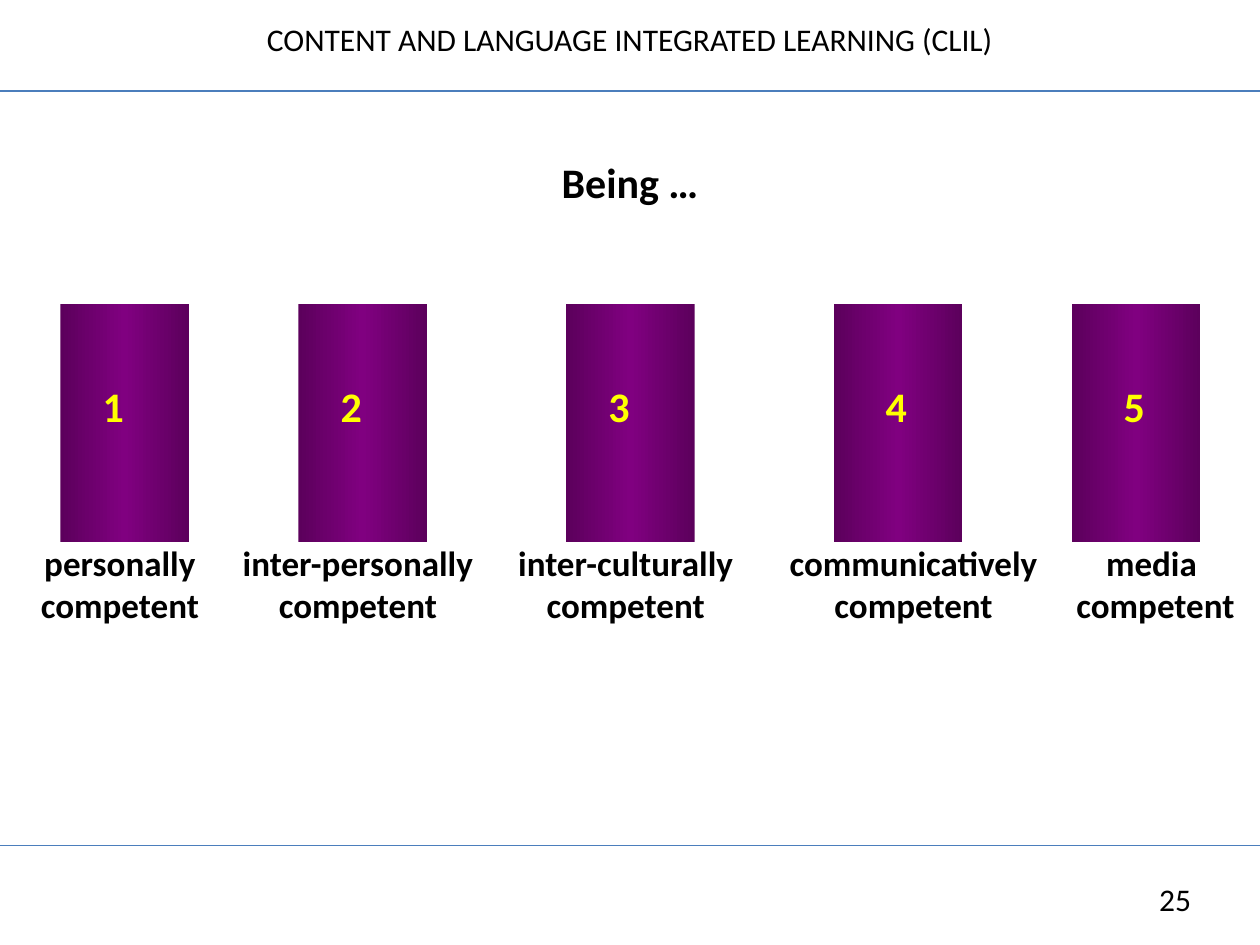
from copy import deepcopy
from dataclasses import dataclass
from itertools import accumulate

from lxml import etree
from pptx import Presentation
from pptx import util as u
from pptx.dml.color import RGBColor
from pptx.enum import shapes, text
from pptx.oxml.ns import qn

BLACK = RGBColor(0x00, 0x00, 0x00)
YELLOW = RGBColor(0xFF, 0xFF, 0x00)
PURPLE = RGBColor(0x80, 0x00, 0x80)
DARK_PURPLE = RGBColor(0x5C, 0x00, 0x5C)
BLUE = RGBColor(0x4B, 0x7E, 0xBC)

CENTER = text.PP_ALIGN.CENTER
LEFT = text.PP_ALIGN.LEFT

# Pillar geometry in points
PILLAR_TOP, PILLAR_WIDTH, PILLAR_HEIGHT = 174, 73.5, 136
LABEL_TOP, LABEL_HEIGHT, LABEL_SHIFT = 306, 55.5, -51
NUMBER_TOP, NUMBER_WIDTH, NUMBER_HEIGHT = 214, 34, 36
PILLAR_LEFTS = accumulate([34.5, 136, 153, 153, 136])

# Label lines, label width, number shift
PILLARS = [
    (["personally competent"], 170, 17),
    (["inter-personally competent"], 170, 17),
    (["inter-culturally competent"], 170, 17),
    (["communicatively competent"], 193, 22.5),
    (["media", " competent"], 193, 22.5),
]


@dataclass
class Page:
    slide: object
    font: str = "Calibri"

    def add_words(self, box, lines, size, color=BLACK, bold=False, align=CENTER):
        frame = box.text_frame
        frame.word_wrap = True
        frame.auto_size = text.MSO_AUTO_SIZE.NONE
        frame.vertical_anchor = text.MSO_ANCHOR.TOP
        para = frame.paragraphs[0]
        para.alignment = align
        para.space_before = u.Pt(0)
        for index, line in enumerate(lines):
            if index:
                para.add_line_break()
            span = para.add_run()
            span.text = line
            span.font.name = self.font
            span.font.size = u.Pt(size)
            span.font.bold = bold
            span.font.color.rgb = color

    def title(self, words, left, top, width, height):
        box = self.slide.shapes.title
        box.left, box.top = u.Pt(left), u.Pt(top)
        box.width, box.height = u.Pt(width), u.Pt(height)
        self.add_words(box, [words], 24, bold=True)

    def label(self, lines, left, top, width, height, size=18, parent=None, **style):
        owner = parent or self.slide
        box = owner.shapes.add_textbox(
            u.Pt(left), u.Pt(top), u.Pt(width), u.Pt(height))
        self.add_words(box, lines, size, **style)

    def rule(self, top):
        line = self.slide.shapes.add_connector(
            shapes.MSO_CONNECTOR.STRAIGHT, u.Pt(0), u.Pt(top), u.Pt(720), u.Pt(top))
        line.line.color.rgb = BLUE
        line.line.width = u.Pt(0.75)
        etree.SubElement(line._element.spPr, qn("a:effectLst"))

    def column(self, left, parent):
        box = parent.shapes.add_shape(
            shapes.MSO_SHAPE.RECTANGLE, u.Pt(left), u.Pt(PILLAR_TOP),
            u.Pt(PILLAR_WIDTH), u.Pt(PILLAR_HEIGHT))
        box.shadow.inherit = False
        box.line.fill.background()
        box.fill.gradient()
        box.fill.gradient_angle = 0
        # A third stop in the middle makes the column look round
        first = box._element.spPr.find(".//" + qn("a:gs"))
        first.addnext(deepcopy(first))
        colors = [DARK_PURPLE, PURPLE, DARK_PURPLE]
        for stop, place, color in zip(box.fill.gradient_stops, [0, 0.5, 1], colors):
            stop.position = place
            stop.color.rgb = color

    def pillar(self, number, left, lines, label_width, number_shift):
        group = self.slide.shapes.add_group_shape()
        self.column(left, group)
        self.label(lines, left + LABEL_SHIFT, LABEL_TOP, label_width, LABEL_HEIGHT,
                   size=20, parent=group, bold=True)
        self.label([str(number)], left + number_shift, NUMBER_TOP, NUMBER_WIDTH,
                   NUMBER_HEIGHT, size=24, parent=group, color=YELLOW, bold=True,
                   align=LEFT)


def main():
    deck = Presentation()
    deck.slide_width, deck.slide_height = u.Pt(720), u.Pt(540)
    page = Page(deck.slides.add_slide(deck.slide_layouts[5]))

    # Header and footer
    page.label(["CONTENT AND LANGUAGE INTEGRATED LEARNING (CLIL)"], 116, 8, 488, 29)
    page.label(["25"], 625.5, 499.5, 92, 29)
    page.rule(52)
    page.rule(483)

    # Title and the five pillars
    page.title("Being …", 218, 86, 284, 36)
    for number, (left, pillar) in enumerate(zip(PILLAR_LEFTS, PILLARS), start=1):
        page.pillar(number, left, *pillar)

    deck.save("out.pptx")


if __name__ == "__main__":
    main()
